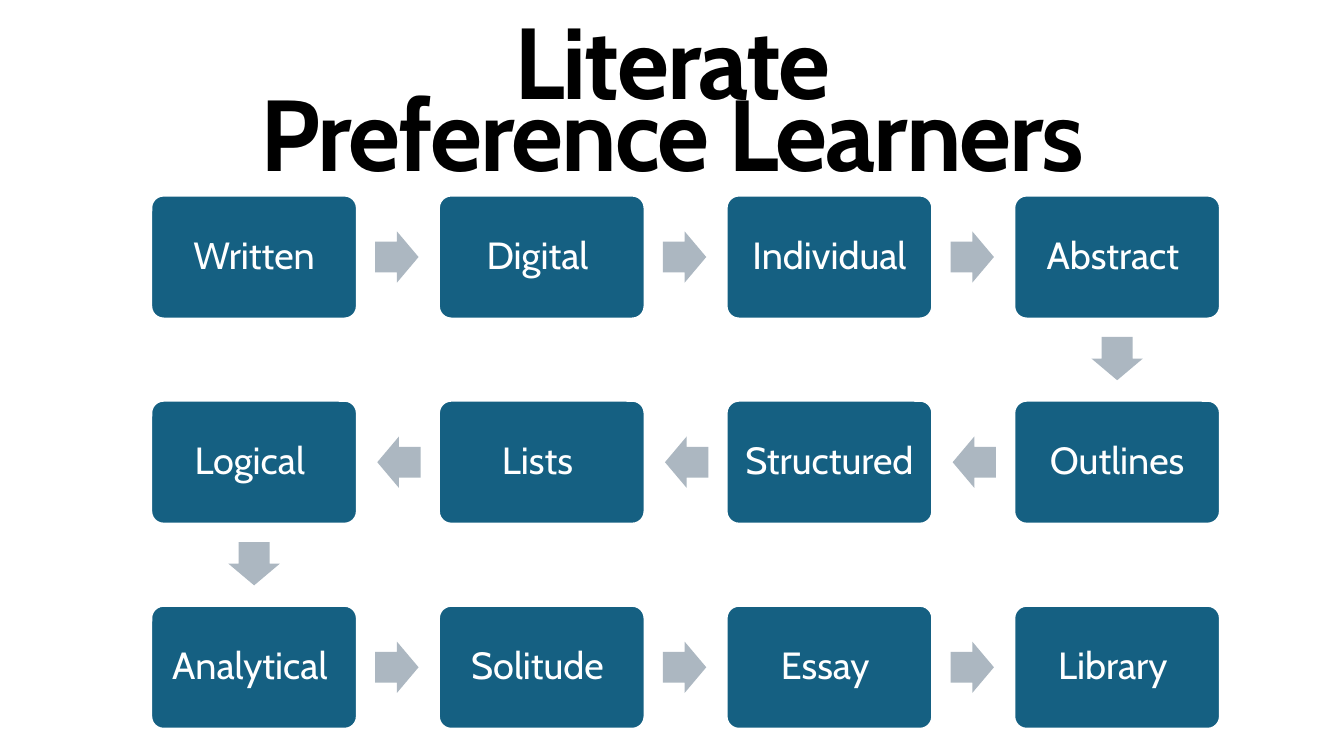
from pptx import Presentation
from pptx.dml.color import RGBColor
from pptx.enum.shapes import MSO_SHAPE
from pptx.enum.text import MSO_ANCHOR, MSO_AUTO_SIZE, PP_ALIGN
from pptx.util import Inches, Pt

BOX = MSO_SHAPE.ROUNDED_RECTANGLE
ARROW = MSO_SHAPE.RIGHT_ARROW
CENTER = PP_ALIGN.CENTER
MIDDLE = MSO_ANCHOR.MIDDLE
TITLE_ONLY = 5

FONT = "Cabin"
BLUE, GREY, WHITE, BLACK = "156082", "ACB7C1", "FFFFFF", "000000"

# Grid of boxes, in inches
BOX_WIDTH, BOX_HEIGHT = 2.04, 1.22
FIRST_LEFT, LAST_LEFT = 1.5, 10.06
FIRST_TOP, LAST_TOP = 1.94, 6.01
ARROW_LENGTH, ARROW_WIDTH = 0.43, 0.51
ARROW_SETBACK = 0.01  # arrows sit slightly nearer to the box they leave

# Trailing spaces belong to the wording and shift the centred words
TRAITS = [
    ["Written", "Digital ", "Individual", "Abstract "],
    ["Logical ", "Lists ", "Structured", "Outlines"],
    ["Analytical ", "Solitude ", "Essay ", "Library "],
]
COLUMN_STEP = (LAST_LEFT - FIRST_LEFT) / (len(TRAITS[0]) - 1)
ROW_STEP = (LAST_TOP - FIRST_TOP) / (len(TRAITS) - 1)


def color(hex_value):
    return RGBColor.from_string(hex_value)


def add_run(paragraph, text, size, hex_value, bold=False):
    run = paragraph.add_run()
    run.text = text
    run.font.name = FONT
    run.font.size = Pt(size)
    run.font.bold = bold
    run.font.color.rgb = color(hex_value)
    return run


def add_filled_shape(slide, kind, center, size, fill):
    (x, y), (width, height) = center, size
    shape = slide.shapes.add_shape(
        kind, Inches(x - width / 2), Inches(y - height / 2),
        Inches(width), Inches(height))
    shape.shadow.inherit = False
    shape.fill.solid()
    shape.fill.fore_color.rgb = color(fill)
    return shape


def box_center(row, column):
    return (FIRST_LEFT + column * COLUMN_STEP + BOX_WIDTH / 2,
            FIRST_TOP + row * ROW_STEP + BOX_HEIGHT / 2)


def format_title(slide, lines):
    title = slide.shapes.title
    title.left, title.top = Inches(0.92), Inches(0.26)
    title.width, title.height = Inches(11.5), Inches(1.74)
    frame = title.text_frame
    frame.auto_size = MSO_AUTO_SIZE.NONE
    frame.vertical_anchor = MIDDLE
    paragraph = frame.paragraphs[0]
    paragraph.alignment = CENTER
    paragraph.line_spacing = 0.6
    for index, line in enumerate(lines):
        if index:
            paragraph.add_line_break()
        run = add_run(paragraph, line, 72, BLACK, bold=True)
        run.font._element.set("spc", "-150")  # tighter letters


def add_box(slide, row, column):
    box = add_filled_shape(slide, BOX, box_center(row, column),
                           (BOX_WIDTH, BOX_HEIGHT), BLUE)
    box.adjustments[0] = 0.1
    box.line.color.rgb = color(WHITE)
    box.line.width = Pt(1.5)
    frame = box.text_frame
    frame.word_wrap = True
    frame.vertical_anchor = MIDDLE
    frame.margin_left = frame.margin_right = Inches(0.14)
    frame.margin_top = frame.margin_bottom = Inches(0.14)
    paragraph = frame.paragraphs[0]
    paragraph.alignment = CENTER
    paragraph.line_spacing = 0.9
    add_run(paragraph, TRAITS[row][column], 27, WHITE)


def add_arrow(slide, start, end):
    (x1, y1), (x2, y2) = box_center(*start), box_center(*end)
    across = end[1] - start[1]
    down = end[0] - start[0]
    center = ((x1 + x2) / 2 - across * ARROW_SETBACK,
              (y1 + y2) / 2 - down * ARROW_SETBACK)
    arrow = add_filled_shape(slide, ARROW, center,
                             (ARROW_LENGTH, ARROW_WIDTH), GREY)
    arrow.adjustments[0], arrow.adjustments[1] = 0.6, 0.5
    arrow.line.fill.background()
    arrow.rotation = 90 if down else (0 if across > 0 else 180)


def snake_order():
    cells = []
    for row, words in enumerate(TRAITS):
        columns = range(len(words))
        cells += [(row, column)
                  for column in (reversed(columns) if row % 2 else columns)]
    return cells


def main():
    presentation = Presentation()
    presentation.slide_width = Inches(13.33)
    presentation.slide_height = Inches(7.5)
    slide = presentation.slides.add_slide(
        presentation.slide_layouts[TITLE_ONLY])

    format_title(slide, ["Literate", "Preference Learners"])

    # Winding chain of boxes, each joined to the one before it
    previous = None
    for cell in snake_order():
        if previous:
            add_arrow(slide, previous, cell)
        add_box(slide, *cell)
        previous = cell

    presentation.save("out.pptx")


if __name__ == "__main__":
    main()
